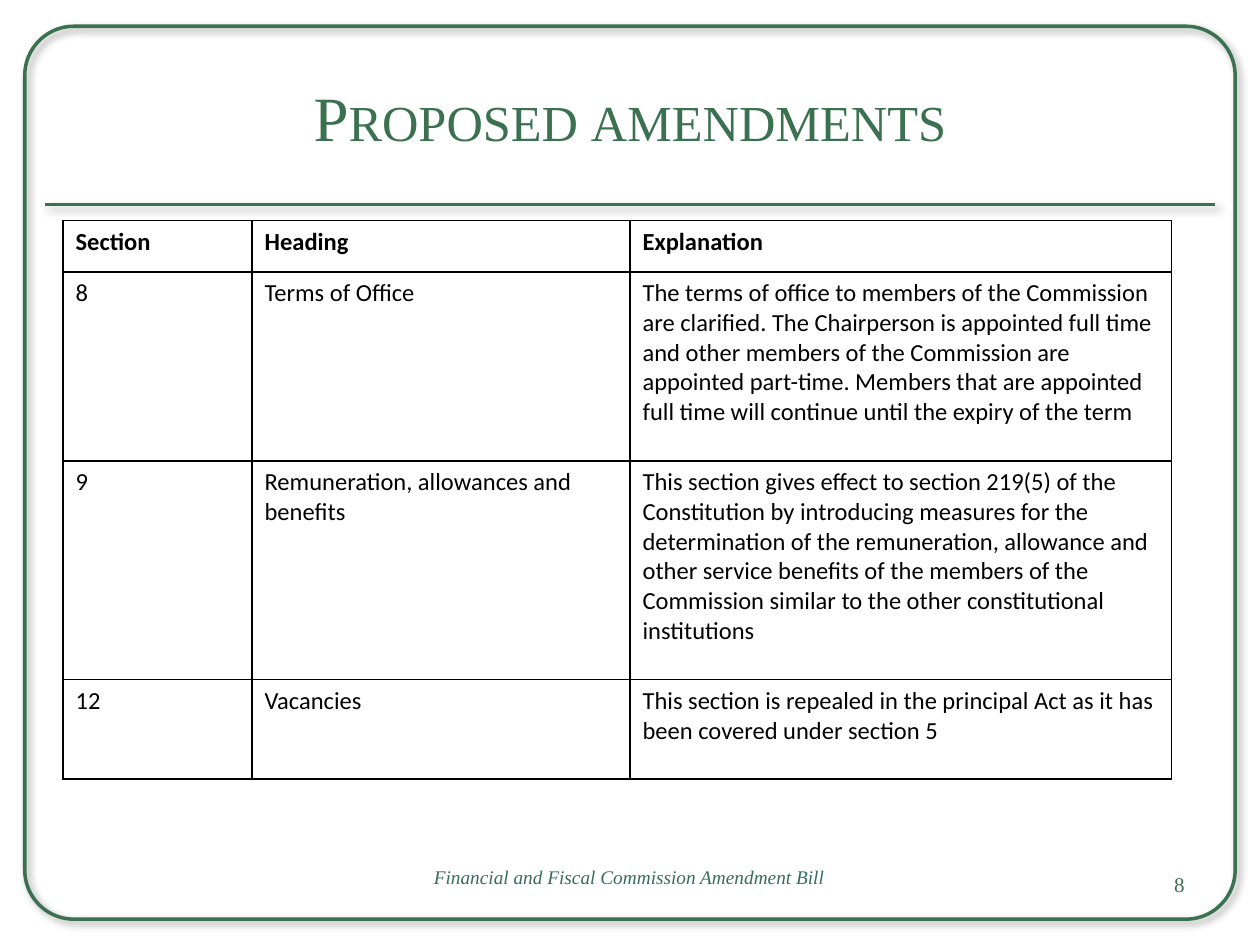
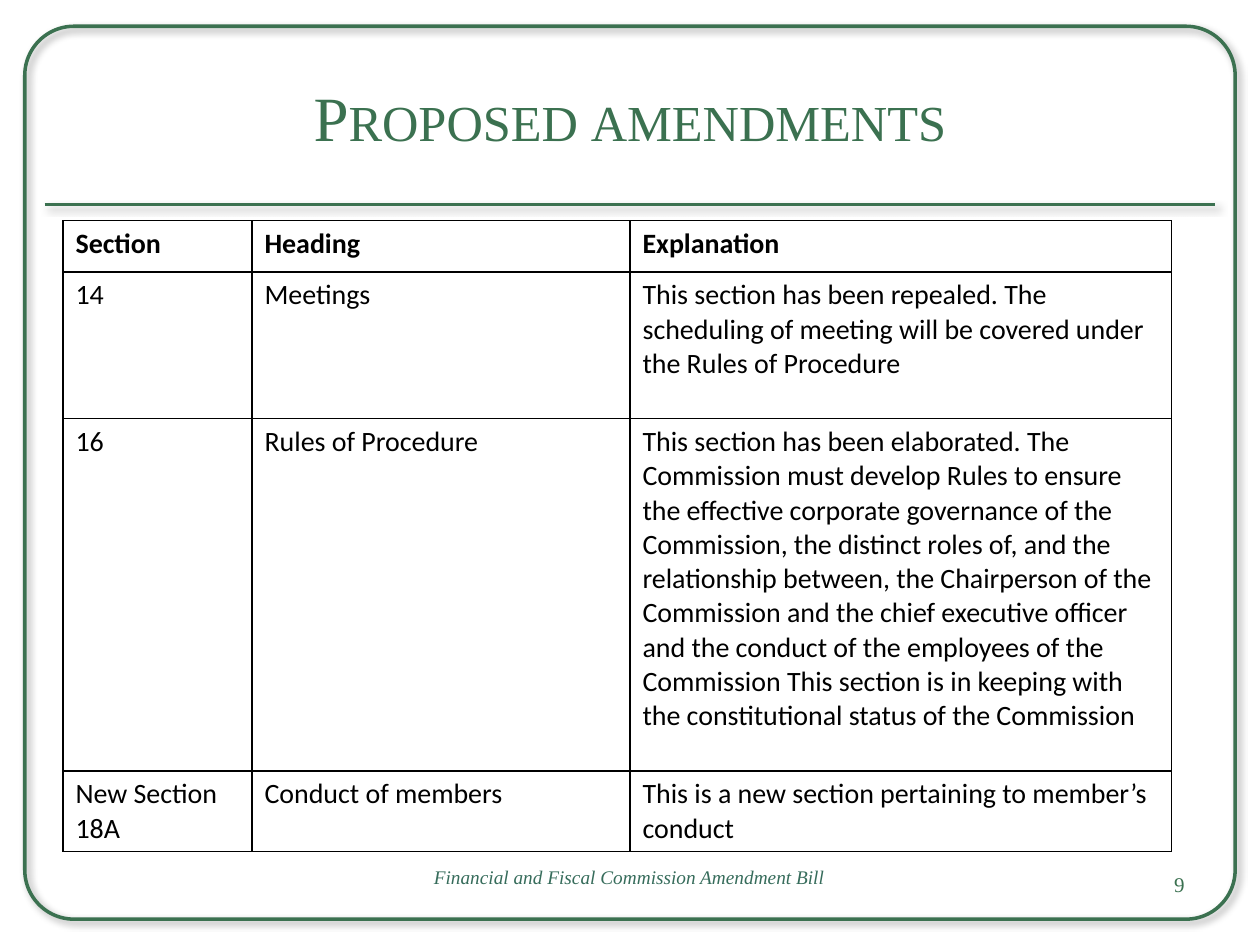
from lxml import etree
from pptx import Presentation
from pptx import util as u
from pptx.dml.color import RGBColor
from pptx.enum import shapes, text
from pptx.oxml import parse_xml
from pptx.oxml.ns import nsdecls

COLOURS = {"green": "3B7150", "footer": "366C5B", "black": "000000"}
SERIF, SANS = "Times New Roman", "Calibri"

TITLE = "Proposed amendments"
FOOTER = "Financial and Fiscal Commission Amendment Bill"
HEADER = ("Section", "Heading", "Explanation")
COLUMN_WIDTHS = (3.81, 7.62, 10.92)
TABLE_LEFT, TABLE_TOP = 1.27, 4.45

SLIDES = [
    {
        "number": 8,
        "size": 14,
        "row_heights": (1.03, 3.81, 4.41, 2.0),
        "rows": [
            ("8", "Terms of Office",
             "The terms of office to members of the Commission are clarified. "
             "The Chairperson is appointed full time and other members of the "
             "Commission are appointed part-time. Members that are appointed "
             "full time will continue until the expiry of the term"),
            ("9", "Remuneration, allowances and benefits",
             "This section gives effect to section 219(5) of the Constitution "
             "by introducing measures for the determination of the "
             "remuneration, allowance and other service benefits of the "
             "members of the Commission similar to the other constitutional "
             "institutions"),
            ("12", "Vacancies",
             "This section is repealed in the principal Act as it has been "
             "covered under section 5"),
        ],
    },
    {
        "number": 9,
        "size": 16,
        "row_heights": (1.03, 2.96, 7.1, 1.63),
        "rows": [
            ("14", "Meetings",
             "This section has been repealed. The scheduling of meeting will "
             "be covered under the Rules of Procedure"),
            ("16", "Rules of Procedure",
             "This section has been elaborated. The Commission must develop "
             "Rules to ensure the effective corporate governance of the "
             "Commission, the distinct roles of, and the relationship "
             "between, the Chairperson of the Commission and the chief "
             "executive officer and the conduct of the employees of the "
             "Commission This section is in keeping with the constitutional "
             "status of the Commission"),
            ("New Section 18A", "Conduct of members",
             "This is a new section pertaining to member’s conduct"),
        ],
    },
]


def write(frame, content, size, font=SERIF, colour="green", bold=False,
          italic=False, small_caps=False, align=text.PP_ALIGN.LEFT,
          anchor=text.MSO_ANCHOR.TOP):
    """Put one formatted paragraph into a text frame."""
    frame.word_wrap = True
    frame.vertical_anchor = anchor
    paragraph = frame.paragraphs[0]
    paragraph.alignment = align
    run = paragraph.add_run()
    run.text = content
    run.font.name = font
    run.font.size = u.Pt(size)
    run.font.bold = bold
    run.font.italic = italic
    run.font.color.rgb = RGBColor.from_string(COLOURS[colour])
    if small_caps:
        run.font._element.set("cap", "small")


def add_text(slide, box, content, size, **style):
    shape = slide.shapes.add_textbox(*(u.Cm(length) for length in box))
    write(shape.text_frame, content, size, **style)


def outline_with_shadow(shape):
    shape.line.color.rgb = RGBColor.from_string(COLOURS["green"])
    shape.line.width = u.Pt(2)
    shape._element.spPr.append(parse_xml(
        f'<a:effectLst {nsdecls("a")}>'
        f'<a:outerShdw blurRad="{u.Pt(4)}" dist="{u.Pt(3)}" dir="2700000" '
        f'algn="tl" rotWithShape="0"><a:srgbClr val="{COLOURS["black"]}">'
        '<a:alpha val="40000"/></a:srgbClr></a:outerShdw></a:effectLst>'))


def add_frame(slide):
    """Add the rounded border and the rule under the title."""
    border = slide.shapes.add_shape(
        shapes.MSO_SHAPE.ROUNDED_RECTANGLE,
        u.Cm(0.5), u.Cm(0.53), u.Cm(24.4), u.Cm(18))
    border.adjustments[0] = 0.055
    border.fill.background()
    outline_with_shadow(border)
    rule = slide.shapes.add_connector(
        shapes.MSO_CONNECTOR.STRAIGHT,
        u.Cm(0.9), u.Cm(4.12), u.Cm(24.5), u.Cm(4.12))
    outline_with_shadow(rule)


def add_borders(cell):
    properties = cell._tc.get_or_add_tcPr()
    for position, side in enumerate(("lnL", "lnR", "lnT", "lnB")):
        properties.insert(position, etree.fromstring(
            f'<a:{side} {nsdecls("a")} w="{u.Pt(1)}"><a:solidFill>'
            f'<a:srgbClr val="{COLOURS["black"]}"/>'
            f'</a:solidFill></a:{side}>'))


def add_amendments_table(slide, rows, row_heights, size):
    table = slide.shapes.add_table(
        len(rows), len(COLUMN_WIDTHS), u.Cm(TABLE_LEFT), u.Cm(TABLE_TOP),
        u.Cm(sum(COLUMN_WIDTHS)), u.Cm(sum(row_heights))).table
    table.first_row = table.horz_banding = False
    for column, width in zip(table.columns, COLUMN_WIDTHS):
        column.width = u.Cm(width)
    for r, (height, contents) in enumerate(zip(row_heights, rows)):
        table.rows[r].height = u.Cm(height)
        for c, content in enumerate(contents):
            cell = table.cell(r, c)
            cell.fill.background()
            add_borders(cell)
            write(cell.text_frame, content, size, font=SANS, colour="black",
                  bold=r == 0)


def add_slide(presentation, content):
    slide = presentation.slides.add_slide(presentation.slide_layouts[6])
    add_frame(slide)
    add_text(slide, (1.27, 0.76, 22.86, 3.18), TITLE, 36, small_caps=True,
             align=text.PP_ALIGN.CENTER, anchor=text.MSO_ANCHOR.MIDDLE)
    add_amendments_table(slide, [HEADER, *content["rows"]],
                         content["row_heights"], content["size"])
    add_text(slide, (18.21, 17.32, 5.92, 1.02), str(content["number"]), 12,
             align=text.PP_ALIGN.RIGHT, anchor=text.MSO_ANCHOR.MIDDLE)
    add_text(slide, (7.49, 17.32, 10.39, 1), FOOTER, 11, colour="footer",
             italic=True, align=text.PP_ALIGN.CENTER)


def main():
    presentation = Presentation()
    presentation.slide_width = u.Cm(25.4)
    presentation.slide_height = u.Cm(19.05)
    for content in SLIDES:
        add_slide(presentation, content)
    presentation.save("out.pptx")


if __name__ == "__main__":
    main()
